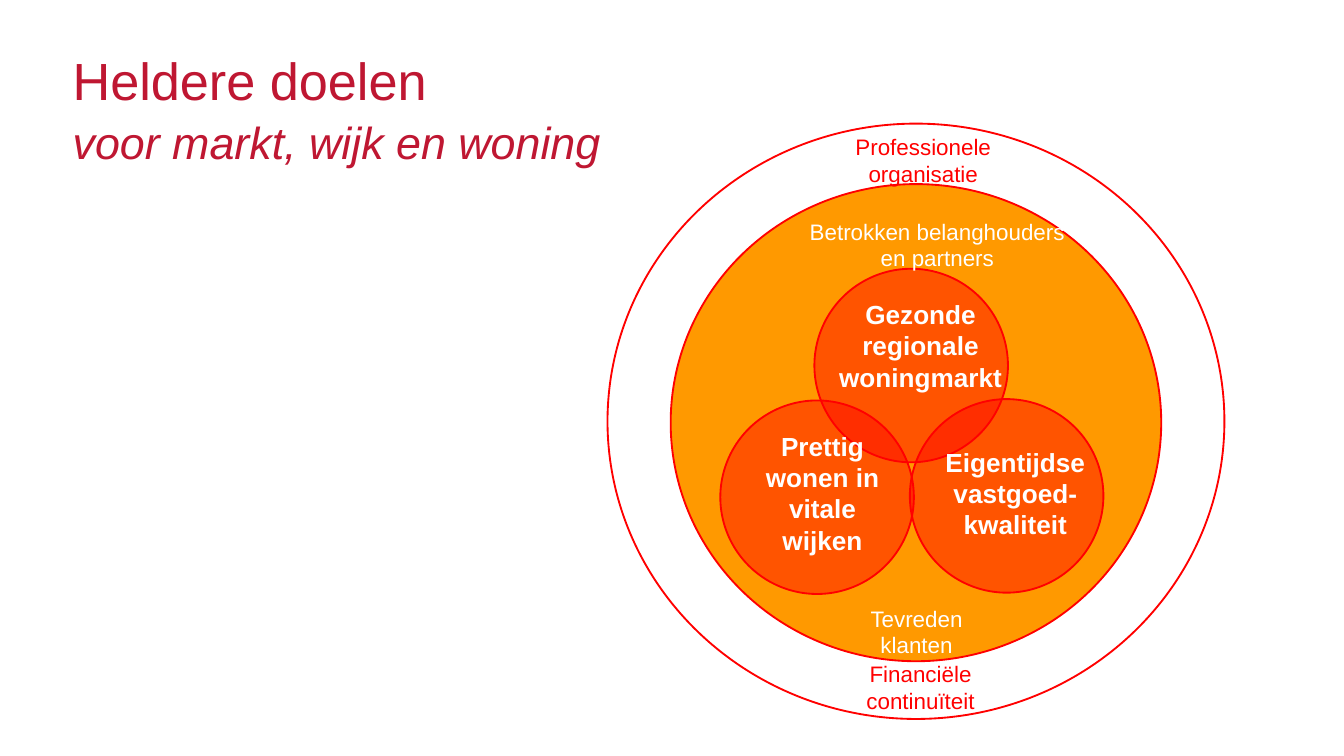
import pptx
import pptx.util
import pptx.dml.color
import pptx.enum.shapes
import pptx.enum.text
import pptx.oxml.ns
import lxml.etree

Inches = pptx.util.Inches
Pt = pptx.util.Pt
RED, ORANGE, WHITE, CRIMSON = "FF0000", "FF9900", "FFFFFF", "BF1732"


def color(value):
    return pptx.dml.color.RGBColor.from_string(value)


def add_run(para, text, size, value, bold=False, italic=False):
    run = para.add_run()
    run.text = text
    run.font.name = "Arial"
    run.font.size = Pt(size)
    run.font.bold = bold
    run.font.italic = italic
    run.font.color.rgb = color(value)


deck = pptx.Presentation()
deck.slide_width = Inches(10)
deck.slide_height = Inches(10 * 9 / 16)
page = deck.slides.add_slide(deck.slide_layouts[5])

title = page.shapes.title
title.left, title.top = Inches(0.54), Inches(0.47)
title.width, title.height = Inches(8.96), Inches(0.71)
frame = title.text_frame
frame.auto_size = pptx.enum.text.MSO_AUTO_SIZE.NONE
frame.word_wrap = True
frame.vertical_anchor = pptx.enum.text.MSO_ANCHOR.MIDDLE
frame.margin_left = frame.margin_right = frame.margin_top = frame.margin_bottom = 0
para = frame.paragraphs[0]
para.alignment = pptx.enum.text.PP_ALIGN.LEFT
para.line_spacing = Pt(30.8)
para.space_before = Pt(0)
add_run(para, "Heldere doelen", 28, CRIMSON)
para.add_line_break()
add_run(para, "voor markt, wijk en woning", 24, CRIMSON, italic=True)

diagram = page.shapes.add_group_shape()

circles = [
    (4.52, 0.92, 4.59, 4.43, WHITE, 100),
    (4.99, 1.37, 3.65, 3.55, ORANGE, 100),
    (5.36, 2.98, 1.44, 1.44, RED, 45),
    (6.77, 2.97, 1.44, 1.44, RED, 45),
    (6.06, 2.00, 1.44, 1.44, RED, 45),
]
for left, top, width, height, fill, opacity in circles:
    circle = diagram.shapes.add_shape(
        pptx.enum.shapes.MSO_SHAPE.OVAL,
        Inches(left), Inches(top), Inches(width), Inches(height))
    circle.shadow.inherit = False
    circle.fill.solid()
    circle.fill.fore_color.rgb = color(fill)
    circle.line.color.rgb = color(RED)
    circle.line.width = Pt(1)
    if opacity < 100:
        solid_fill = circle.element.spPr.find(pptx.oxml.ns.qn("a:solidFill"))
        alpha = lxml.etree.SubElement(solid_fill[0], pptx.oxml.ns.qn("a:alpha"))
        alpha.set("val", str(opacity * 1000))

labels = [
    (6.12, 2.17, 1.46, 0.81, "Gezonde regionale woningmarkt", 14, WHITE),
    (5.56, 3.15, 1.12, 1.05, "Prettig wonen in vitale wijken", 14, WHITE),
    (6.92, 3.27, 1.27, 0.81, "Eigentijdse vastgoed-kwaliteit", 14, WHITE),
    (6.23, 4.45, 1.18, 0.31, "Tevreden klanten", 12, WHITE),
    (6.26, 4.86, 1.18, 0.52, "Financiële continuïteit", 12, RED),
    (6.17, 0.94, 1.40, 0.52, "Professionele organisatie", 12, RED),
    (5.86, 1.57, 2.23, 0.51, "Betrokken belanghouders en partners", 12, WHITE),
]
for left, top, width, height, text, size, value in labels:
    box = diagram.shapes.add_textbox(
        Inches(left), Inches(top), Inches(width), Inches(height))
    box.text_frame.word_wrap = True
    para = box.text_frame.paragraphs[0]
    para.alignment = pptx.enum.text.PP_ALIGN.CENTER
    add_run(para, text, size, value, bold=size == 14)

deck.save("out.pptx")
